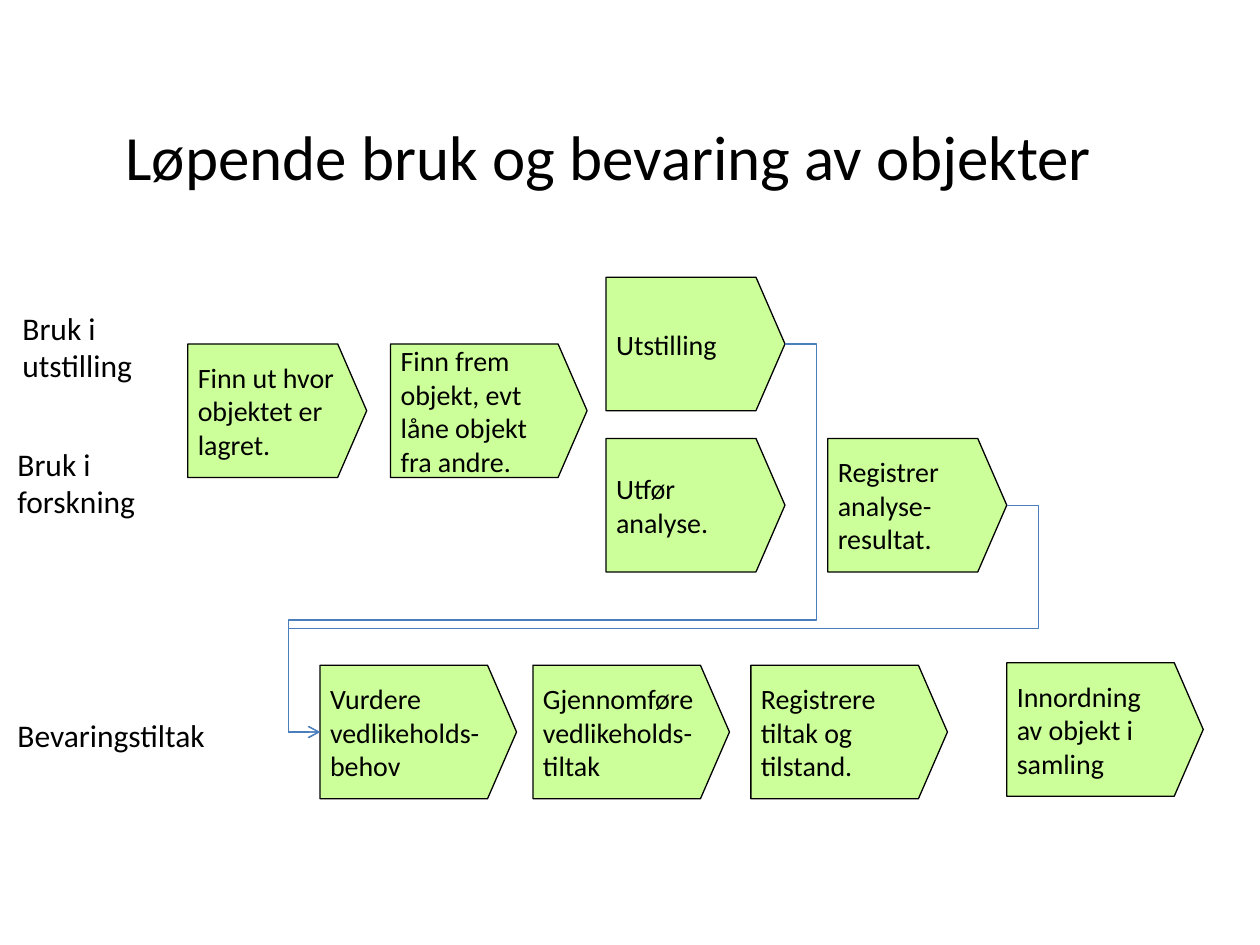
from lxml.etree import SubElement
from pptx import Presentation
from pptx.dml.color import RGBColor
from pptx.enum.shapes import MSO_CONNECTOR, MSO_SHAPE
from pptx.enum.text import MSO_ANCHOR, MSO_AUTO_SIZE, PP_ALIGN
from pptx.oxml.ns import qn
from pptx.util import Inches, Pt

BLACK = RGBColor(0x00, 0x00, 0x00)
GREEN = RGBColor(0xCC, 0xFF, 0x99)
BLUE = RGBColor(0x4B, 0x7E, 0xBC)
FONT = "Calibri"

TITLE = "Løpende bruk og bevaring av objekter"
LABELS = [
    ("Bruk i utstilling", 0.08, 2.4, 1.57, 0.71),
    ("Bruk i forskning", 0.04, 3.48, 1.57, 0.71),
    ("Bevaringstiltak", 0.04, 5.63, 1.81, 0.4),
]

NARROW, WIDE, STEP_HEIGHT = 1.42, 1.56, 1.06
ROWS = {"exhibit": 2.2, "prepare": 2.73, "research": 3.48, "preserve": 5.28, "return": 5.26}
STEPS = [
    ("Finn ut hvor objektet er lagret.", "prepare", 1.49, NARROW),
    ("Finn frem objekt, evt låne objekt fra andre.", "prepare", 3.1, WIDE),
    ("Utfør analyse.", "research", 4.81, NARROW),
    ("Registrer analyse-resultat.", "research", 6.57, NARROW),
    ("Vurdere vedlikeholds-behov", "preserve", 2.54, WIDE),
    ("Innordning\nav objekt i samling", "return", 7.99, WIDE),
    ("Gjennomføre vedlikeholds-tiltak", "preserve", 4.23, WIDE),
    ("Registrere tiltak og tilstand.", "preserve", 5.96, WIDE),
    ("Utstilling", "exhibit", 4.81, NARROW),
]
ROUTES = [
    ("Utstilling", "Vurdere vedlikeholds-behov", 4.92),
    ("Registrer analyse-resultat.", "Vurdere vedlikeholds-behov", 4.99),
]
ROUTE_MARGIN = 0.25
LEFT_SIDE, RIGHT_SIDE = 1, 3


def write_text(shape, text, size, alignment=PP_ALIGN.LEFT):
    frame = shape.text_frame
    frame.word_wrap = True
    frame.text = text
    for paragraph in frame.paragraphs:
        paragraph.alignment = alignment
        paragraph.font.name = FONT
        paragraph.font.size = Pt(size)
        paragraph.font.color.rgb = BLACK
    return frame


def add_title(slide):
    title = slide.shapes.title
    title.left, title.top, title.width, title.height = map(Inches, (0.33, 0.61, 9, 1.25))
    frame = write_text(title, TITLE, 36, PP_ALIGN.CENTER)
    frame.vertical_anchor = MSO_ANCHOR.MIDDLE


def add_label(slide, text, *box):
    label = slide.shapes.add_textbox(*map(Inches, box))
    write_text(label, text, 18).auto_size = MSO_AUTO_SIZE.SHAPE_TO_FIT_TEXT


def add_step(slide, text, row, left, width):
    box = map(Inches, (left, ROWS[row], width, STEP_HEIGHT))
    step = slide.shapes.add_shape(MSO_SHAPE.PENTAGON, *box)
    step.adjustments[0] = 0.217
    step.shadow.inherit = False
    step.fill.solid()
    step.fill.fore_color.rgb = GREEN
    step.line.color.rgb = BLACK
    step.line.width = Pt(0.75)
    frame = write_text(step, text, 16)
    frame.vertical_anchor = MSO_ANCHOR.MIDDLE
    frame.margin_left = frame.margin_right = Inches(0.08)
    frame.margin_top = frame.margin_bottom = Inches(0.04)
    return step


def add_route(slide, source, target, lane):
    connector = slide.shapes.add_connector(MSO_CONNECTOR.ELBOW, 0, 0, 0, 0)
    connector.begin_connect(source, RIGHT_SIDE)
    connector.end_connect(target, LEFT_SIDE)
    connector.line.color.rgb = BLUE
    connector.line.width = Pt(0.75)

    overhang = Inches(ROUTE_MARGIN) / connector.width
    drop = (Inches(lane) - connector.top) / connector.height
    properties = connector._element.spPr
    geometry = properties.find(qn("a:prstGeom"))
    geometry.set("prst", "bentConnector5")
    guides = geometry.find(qn("a:avLst"))
    for number, share in enumerate((-overhang, drop, 1 + overhang), 1):
        SubElement(guides, qn("a:gd"), name=f"adj{number}", fmla=f"val {round(share * 100000)}")
    SubElement(properties.find(qn("a:ln")), qn("a:tailEnd"), type="arrow")
    SubElement(properties, qn("a:effectLst"))


def main():
    presentation = Presentation()
    presentation.slide_width, presentation.slide_height = Inches(10), Inches(7.5)
    slide = presentation.slides.add_slide(presentation.slide_layouts[5])
    add_title(slide)
    for label in LABELS:
        add_label(slide, *label)
    steps = {step[0]: add_step(slide, *step) for step in STEPS}
    for source, target, lane in ROUTES:
        add_route(slide, steps[source], steps[target], lane)
    presentation.save("out.pptx")


if __name__ == "__main__":
    main()
